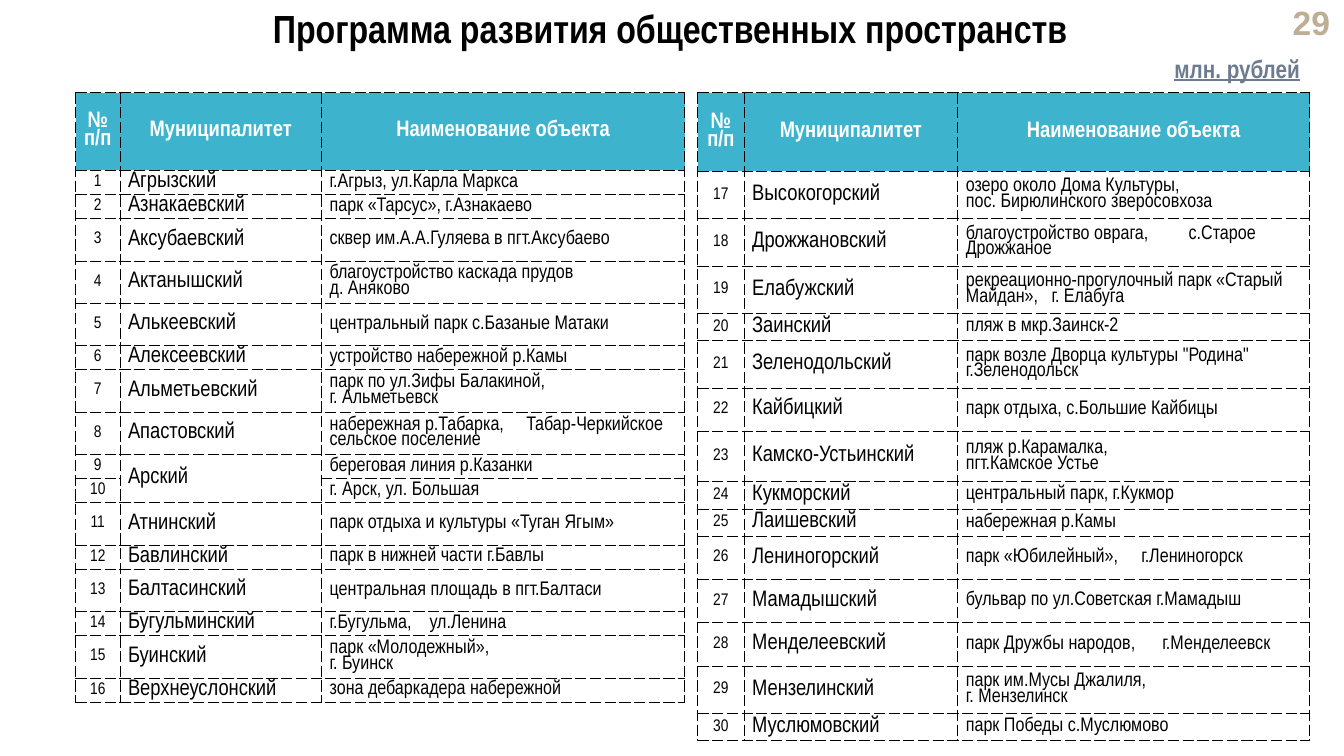
from copy import deepcopy
from dataclasses import dataclass

from lxml import etree
from pptx import Presentation
from pptx.dml.color import RGBColor
from pptx.enum.text import MSO_ANCHOR, MSO_AUTO_SIZE, PP_ALIGN
from pptx.oxml.ns import qn
from pptx.util import Inches, Pt

LEFT, CENTER, RIGHT = PP_ALIGN.LEFT, PP_ALIGN.CENTER, PP_ALIGN.RIGHT
TOP, MIDDLE = MSO_ANCHOR.TOP, MSO_ANCHOR.MIDDLE
NO_AUTOFIT = MSO_AUTO_SIZE.NONE
TITLE_ONLY_LAYOUT = 5


@dataclass(frozen=True)
class Theme:
    font: str = "Arial Narrow"
    number_font: str = "Arial"
    text: str = "000000"
    header_text: str = "FFFFFF"
    header_fill: str = "3DB3CD"
    border: str = "000000"
    unit: str = "6C7B90"
    page_number: str = "BFAE96"
    title_size: int = 28
    page_number_size: int = 24
    unit_size: int = 18
    header_size: int = 16
    index_size: int = 12
    municipality_size: int = 16
    site_size: int = 14
    cell_spacing: float = 0.85


THEME = Theme()
HEADERS = ("№ п/п", "Муниципалитет", "Наименование объекта")

LEFT_ROWS = (
    (0.24, "Агрызский", "г.Агрыз, ул.Карла Маркса"),
    (0.24, "Азнакаевский", "парк «Тарсус», г.Азнакаево"),
    (0.42, "Аксубаевский", "сквер им.А.А.Гуляева в пгт.Аксубаево"),
    (0.42, "Актанышский", "благоустройство каскада прудов\vд. Аняково"),
    (0.42, "Алькеевский", "центральный парк с.Базаные Матаки"),
    (0.24, "Алексеевский", "устройство набережной р.Камы"),
    (0.42, "Альметьевский", "парк по ул.Зифы Балакиной,\vг. Альметьевск"),
    (0.42, "Апастовский", "набережная р.Табарка,\tТабар-Черкийское сельское поселение", 1.95),
    (0.24, "Арский", "береговая линия р.Казанки"),
    (0.24, "", "г. Арск, ул. Большая"),
    (0.42, "Атнинский", "парк отдыха и культуры «Туган Ягым»"),
    (0.24, "Бавлинский", "парк в нижней части г.Бавлы"),
    (0.42, "Балтасинский", "центральная площадь в пгт.Балтаси"),
    (0.24, "Бугульминский", "г.Бугульма,\tул.Ленина", 0.99),
    (0.42, "Буинский", "парк «Молодежный»,\vг. Буинск"),
    (0.24, "Верхнеуслонский", "зона дебаркадера набережной"),
)

RIGHT_ROWS = (
    (0.47, "Высокогорский", "озеро около Дома Культуры,\vпос. Бирюлинского зверосовхоза"),
    (0.47, "Дрожжановский", "благоустройство оврага,\tс.Старое Дрожжаное", 2.21),
    (0.47, "Елабужский", "рекреационно-прогулочный парк «Старый Майдан»,\tг. Елабуга", 0.85),
    (0.27, "Заинский", "пляж в мкр.Заинск-2"),
    (0.47, "Зеленодольский", "парк возле Дворца культуры \"Родина\"\vг.Зеленодольск"),
    (0.43, "Кайбицкий", "парк отдыха, с.Большие Кайбицы"),
    (0.5, "Камско-Устьинский", "пляж р.Карамалка,\vпгт.Камское Устье"),
    (0.27, "Кукморский", "центральный парк, г.Кукмор"),
    (0.27, "Лаишевский", "набережная р.Камы"),
    (0.43, "Лениногорский", "парк «Юбилейный»,\tг.Лениногорск", 1.74),
    (0.43, "Мамадышский", "бульвар по ул.Советская г.Мамадыш"),
    (0.43, "Менделеевский", "парк Дружбы народов,\tг.Менделеевск", 1.95),
    (0.47, "Мензелинский", "парк им.Мусы Джалиля,\vг. Мензелинск"),
    (0.27, "Муслюмовский", "парк Победы с.Муслюмово"),
)


def write(paragraph, text, size, color, align=LEFT, bold=False, underline=False,
          font=THEME.font, spacing=1.0):
    paragraph.text = text
    paragraph.alignment = align
    paragraph.line_spacing = spacing
    paragraph.space_before = Pt(0)
    for run in paragraph.runs:
        run.font.name = font
        run.font.size = Pt(size)
        run.font.bold = bold
        run.font.underline = underline
        run.font.color.rgb = RGBColor.from_string(color)
    for line_break in paragraph._p.findall(qn("a:br")):
        line_break.append(deepcopy(paragraph.runs[0].font._element))


def add_tab_stop(paragraph, position):
    stops = etree.SubElement(paragraph._p.get_or_add_pPr(), qn("a:tabLst"))
    etree.SubElement(stops, qn("a:tab"), pos=str(Inches(position)), algn="l")


def add_borders(cell):
    properties = cell._tc.get_or_add_tcPr()
    for side in ("lnL", "lnR", "lnT", "lnB"):
        line = etree.SubElement(properties, qn(f"a:{side}"), w=str(Pt(0.5)))
        fill = etree.SubElement(line, qn("a:solidFill"))
        etree.SubElement(fill, qn("a:srgbClr"), val=THEME.border)
        etree.SubElement(line, qn("a:prstDash"), val="sysDash")


def format_cell(cell, fill=None):
    cell.margin_left = cell.margin_right = Inches(0.08)
    cell.margin_top = cell.margin_bottom = 0
    cell.vertical_anchor = MIDDLE
    add_borders(cell)
    if fill:
        cell.fill.solid()
        cell.fill.fore_color.rgb = RGBColor.from_string(fill)
    else:
        cell.fill.background()


def fill_header(table):
    for cell, label in zip(table.rows[0].cells, HEADERS):
        format_cell(cell, THEME.header_fill)
        write(cell.text_frame.paragraphs[0], label, THEME.header_size,
              THEME.header_text, CENTER, bold=True, spacing=THEME.cell_spacing)


def fill_row(table, row_index, number, municipality, site, tab_stop=None):
    entries = (
        (str(number), THEME.index_size, CENTER),
        (municipality, THEME.municipality_size, LEFT),
        (site, THEME.site_size, LEFT),
    )
    for cell, (text, size, align) in zip(table.rows[row_index].cells, entries):
        format_cell(cell)
        if text:
            write(cell.text_frame.paragraphs[0], text, size, THEME.text, align,
                  spacing=THEME.cell_spacing)
    if tab_stop:
        add_tab_stop(table.cell(row_index, 2).text_frame.paragraphs[0], tab_stop)
    if not municipality:
        table.cell(row_index - 1, 1).merge(table.cell(row_index, 1))


def add_sites_table(slide, left, widths, header_height, rows, first_number):
    heights = [header_height] + [row[0] for row in rows]
    frame = slide.shapes.add_table(
        len(heights), len(widths), Inches(left), Inches(0.92),
        Inches(sum(widths)), Inches(sum(heights)))
    table = frame.table
    table.horz_banding = False
    for column, width in zip(table.columns, widths):
        column.width = Inches(width)
    for table_row, height in zip(table.rows, heights):
        table_row.height = Inches(height)
    fill_header(table)
    for offset, (_, *content) in enumerate(rows):
        fill_row(table, offset + 1, first_number + offset, *content)


def set_title(slide, text):
    title = slide.shapes.title
    title.left, title.top = Inches(0.75), Inches(0.05)
    title.width, title.height = Inches(11.79), Inches(0.63)
    title.text_frame.auto_size = NO_AUTOFIT
    title.text_frame.vertical_anchor = TOP
    write(title.text_frame.paragraphs[0], text, THEME.title_size, THEME.text,
          CENTER, bold=True, spacing=0.9)


def add_label(slide, box, text, size, color, anchor=TOP, **style):
    shape = slide.shapes.add_textbox(*map(Inches, box))
    shape.text_frame.word_wrap = True
    shape.text_frame.vertical_anchor = anchor
    write(shape.text_frame.paragraphs[0], text, size, color, RIGHT, bold=True, **style)


def main():
    presentation = Presentation()
    presentation.slide_width = Inches(13.33)
    presentation.slide_height = Inches(7.5)
    slide = presentation.slides.add_slide(presentation.slide_layouts[TITLE_ONLY_LAYOUT])
    set_title(slide, "Программа развития общественных пространств")
    add_label(slide, (12.44, 0.05, 0.85, 0.34), "29", THEME.page_number_size,
              THEME.page_number, MIDDLE, font=THEME.number_font)
    add_sites_table(slide, 0.75, (0.44, 2, 3.6), 0.77, LEFT_ROWS, 1)
    add_sites_table(slide, 6.92, (0.46, 2.12, 3.49), 0.78, RIGHT_ROWS, len(LEFT_ROWS) + 1)
    add_label(slide, (11.11, 0.48, 1.88, 0.32), "млн. рублей", THEME.unit_size,
              THEME.unit, underline=True)
    presentation.save("out.pptx")


if __name__ == "__main__":
    main()
